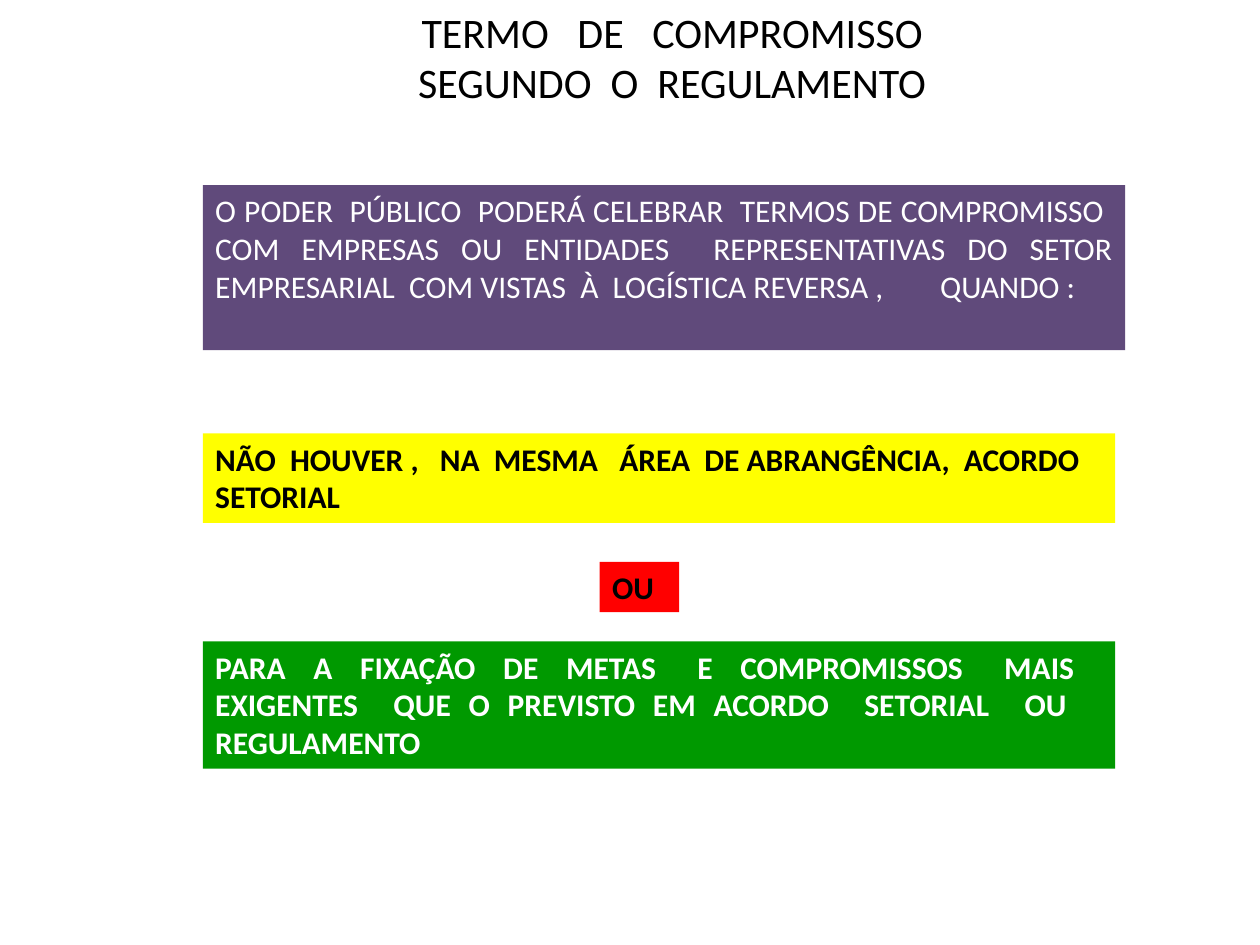
from pptx import Presentation
from pptx.dml.color import RGBColor
from pptx.enum.shapes import MSO_SHAPE
from pptx.enum.text import MSO_ANCHOR, MSO_AUTO_SIZE, PP_ALIGN
from pptx.util import Inches, Pt

THEME = {
    "font": "Calibri", "title_size": 24, "body_size": 18,
    "black": "000000", "white": "FFFFFF", "purple": "604A7B",
    "yellow": "FFFF00", "red": "FF0000", "green": "009900",
}

TITLE = ["TERMO   DE   COMPROMISSO", "SEGUNDO  O  REGULAMENTO"]
TITLE_BOX = (0.67, 0, 9.33, 0.91)

LEFT, WIDTH = 1.61, 7.24
BOXES = [
    {"text": "O PODER  PÚBLICO  PODERÁ CELEBRAR  TERMOS DE COMPROMISSO  "
             "COM EMPRESAS OU ENTIDADES  REPRESENTATIVAS DO SETOR "
             "EMPRESARIAL  COM VISTAS  À  LOGÍSTICA REVERSA ,        QUANDO :",
     "box": (LEFT, 1.47, 7.32, 1.31), "fill": "purple", "color": "white",
     "bold": False, "align": PP_ALIGN.JUSTIFY},
    {"text": "NÃO  HOUVER ,   NA  MESMA   ÁREA  DE ABRANGÊNCIA,  ACORDO   SETORIAL",
     "box": (LEFT, 3.44, WIDTH, 0.71), "fill": "yellow", "color": "black",
     "bold": True, "align": PP_ALIGN.LEFT},
    {"text": "OU",
     "box": (4.76, 4.46, 0.63, 0.4), "fill": "red", "color": "black",
     "bold": True, "align": PP_ALIGN.LEFT},
    {"text": "PARA  A  FIXAÇÃO  DE  METAS   E  COMPROMISSOS   MAIS   "
             "EXIGENTES  QUE O PREVISTO EM ACORDO  SETORIAL  OU   REGULAMENTO",
     "box": (LEFT, 5.09, WIDTH, 1.01), "fill": "green", "color": "white",
     "bold": True, "align": PP_ALIGN.JUSTIFY},
]


def theme_color(name):
    return RGBColor.from_string(THEME[name])


def write_text(shape, lines, size, color, bold, align):
    frame = shape.text_frame
    frame.text = "\n".join(lines)
    frame.word_wrap = True
    frame.auto_size = MSO_AUTO_SIZE.NONE
    frame.vertical_anchor = MSO_ANCHOR.TOP
    for paragraph in frame.paragraphs:
        paragraph.alignment = align
        font = paragraph.font
        font.name = THEME["font"]
        font.size = Pt(THEME[size])
        font.bold = bold
        font.color.rgb = theme_color(color)


def add_title(slide):
    title = slide.shapes.title
    title.left, title.top, title.width, title.height = map(Inches, TITLE_BOX)
    write_text(title, TITLE, "title_size", "black", False, PP_ALIGN.CENTER)


def add_box(slide, item):
    shape = slide.shapes.add_shape(MSO_SHAPE.RECTANGLE, *map(Inches, item["box"]))
    shape.shadow.inherit = False
    shape.fill.solid()
    shape.fill.fore_color.rgb = theme_color(item["fill"])
    shape.line.fill.background()
    write_text(shape, [item["text"]], "body_size", item["color"],
               item["bold"], item["align"])


def main():
    presentation = Presentation()
    presentation.slide_width, presentation.slide_height = Inches(10), Inches(7.5)
    title_only = presentation.slide_layouts[5]
    slide = presentation.slides.add_slide(title_only)
    add_title(slide)
    for item in BOXES:
        add_box(slide, item)
    presentation.save("out.pptx")


if __name__ == "__main__":
    main()
